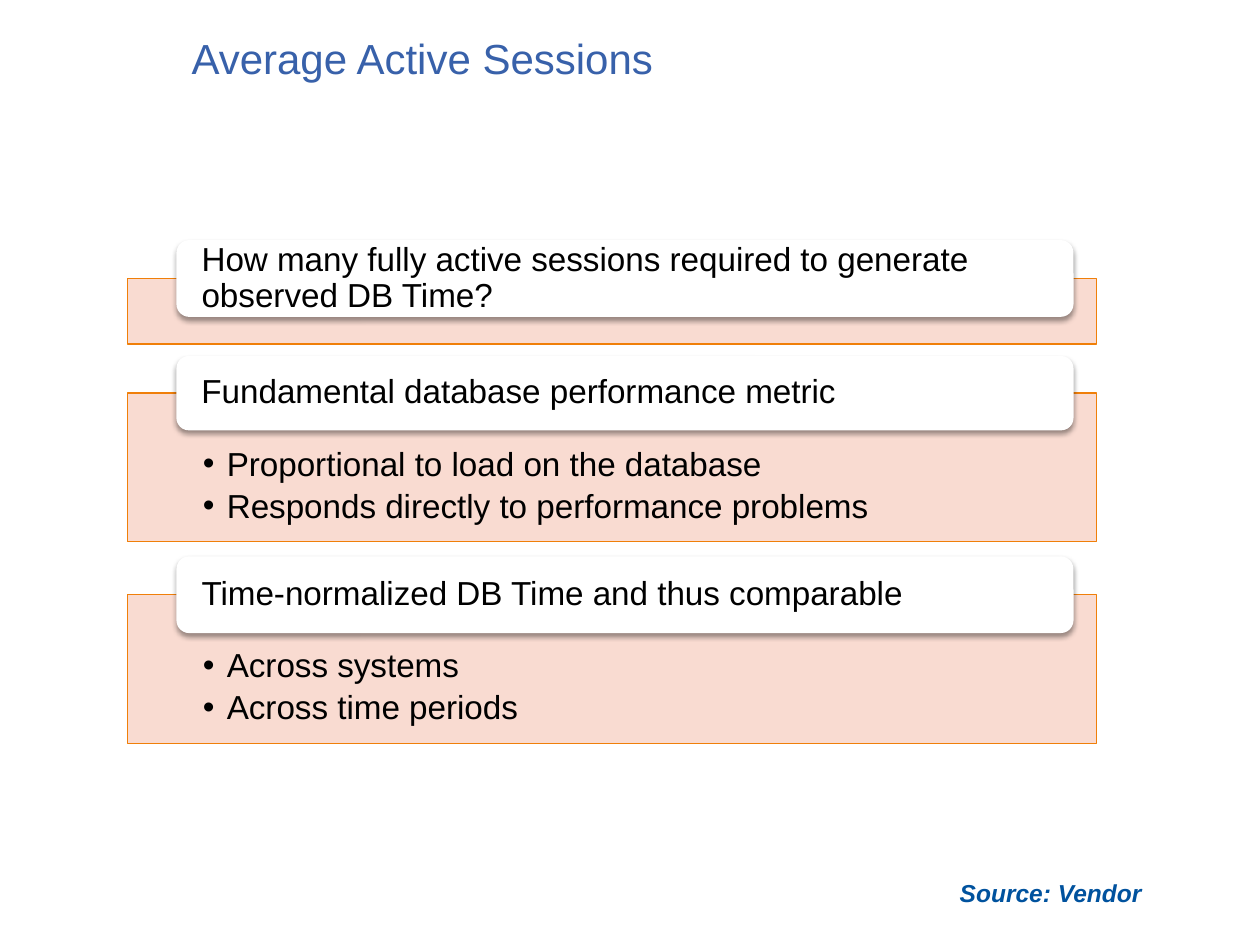
from lxml import etree
from pptx import Presentation, util as u
from pptx.dml.color import RGBColor
from pptx.enum import shapes, text
from pptx.oxml.ns import qn

# Content: panel top, panel height, heading height, heading, points
TITLE = "Average Active Sessions"
SOURCE = "Source: Vendor"
PANELS = [
    (2.21, 0.52, 0.61,
     "How many fully active sessions required to generate observed DB Time?", []),
    (3.12, 1.18, 0.59, "Fundamental database performance metric",
     ["Proportional to load on the database",
      "Responds directly to performance problems"]),
    (4.72, 1.18, 0.61, "Time-normalized DB Time and thus comparable",
     ["Across systems", "Across time periods"]),
]

BLUE = RGBColor(0x38, 0x61, 0xAA)
NAVY = RGBColor(0x00, 0x52, 0x9E)
PINK = RGBColor(0xF9, 0xD8, 0xCC)
ORANGE = RGBColor(0xF0, 0x7F, 0x09)
WHITE = RGBColor(0xFF, 0xFF, 0xFF)
BLACK = RGBColor(0, 0, 0)

LEFT, WIDTH = 1.01, 7.69
HEAD_LEFT, HEAD_WIDTH = 1.4, 7.12
INDENT = u.Inches(0.19)


def add_run(para, words, size, color):
    run = para.add_run()
    run.text = words
    run.font.name = "Arial"
    run.font.size = u.Pt(size)
    run.font.color.rgb = color
    return run


def add_box(kind, left, top, width, height, fill):
    box = slide.shapes.add_shape(kind, *map(u.Inches, (left, top, width, height)))
    box.shadow.inherit = False
    box.fill.solid()
    box.fill.fore_color.rgb = fill
    return box


def set_frame(box, anchor, side, top=0, bottom=0):
    frame = box.text_frame
    frame.word_wrap = True
    frame.vertical_anchor = anchor
    frame.margin_left = frame.margin_right = u.Inches(side)
    frame.margin_top, frame.margin_bottom = u.Inches(top), u.Inches(bottom)
    return frame


def set_alpha(color, share):
    etree.SubElement(color, qn("a:alpha"), val=str(share * 1000))


def add_shadow(box):
    effects = box._element.spPr.find(qn("a:effectLst"))
    outer = etree.SubElement(
        effects, qn("a:outerShdw"), blurRad=str(u.Pt(3.1)), dist=str(u.Pt(1.6)),
        dir="5400000", algn="t", rotWithShape="0")
    set_alpha(etree.SubElement(outer, qn("a:srgbClr"), val="000000"), 38)


def add_line(para, words):
    para.alignment = text.PP_ALIGN.LEFT
    para.line_spacing = 0.9
    add_run(para, words, 19, BLACK)


def add_points(frame, points):
    for i, point in enumerate(points):
        para = frame.add_paragraph() if i else frame.paragraphs[0]
        props = para._p.get_or_add_pPr()
        props.set("marL", str(INDENT))
        props.set("indent", str(-INDENT))
        etree.SubElement(props, qn("a:buFont"), typeface="Arial")
        etree.SubElement(props, qn("a:buChar"), char="•")
        para.space_after = u.Pt(3.5)
        add_line(para, point)


deck = Presentation()
deck.slide_width, deck.slide_height = u.Inches(10), u.Inches(7.5)
slide = deck.slides.add_slide(deck.slide_layouts[5])

# Title
title = slide.shapes.title
title.left, title.top = u.Inches(1.42), 0
title.width, title.height = u.Inches(6.08), u.Inches(0.92)
frame = set_frame(title, text.MSO_ANCHOR.MIDDLE, 0.1, 0.05, 0.05)
frame.paragraphs[0].alignment = text.PP_ALIGN.LEFT
add_run(frame.paragraphs[0], TITLE, 24, BLUE)

# Panels, each with a heading centred on its top edge
for top, height, tall, heading, points in PANELS:
    panel = add_box(shapes.MSO_SHAPE.RECTANGLE, LEFT, top, WIDTH, height, PINK)
    set_alpha(panel._element.spPr.find(qn("a:solidFill"))[0], 90)
    panel.line.color.rgb = ORANGE
    panel.line.width = u.Pt(0.75)
    add_points(set_frame(panel, text.MSO_ANCHOR.TOP, 0.6, 0.43, 0.15), points)

    head = add_box(shapes.MSO_SHAPE.ROUNDED_RECTANGLE, HEAD_LEFT,
                   top - tall / 2, HEAD_WIDTH, tall, WHITE)
    head.line.fill.background()
    add_shadow(head)
    frame = set_frame(head, text.MSO_ANCHOR.MIDDLE, 0.17)
    add_line(frame.paragraphs[0], heading)

# Source note
note = slide.shapes.add_textbox(*map(u.Inches, (2.08, 6.92, 7.08, 0.5)))
para = set_frame(note, text.MSO_ANCHOR.TOP, 0.1, 0.05, 0.05).paragraphs[0]
para.alignment = text.PP_ALIGN.RIGHT
run = add_run(para, SOURCE, 14, NAVY)
run.font.bold = run.font.italic = True

deck.save("out.pptx")
